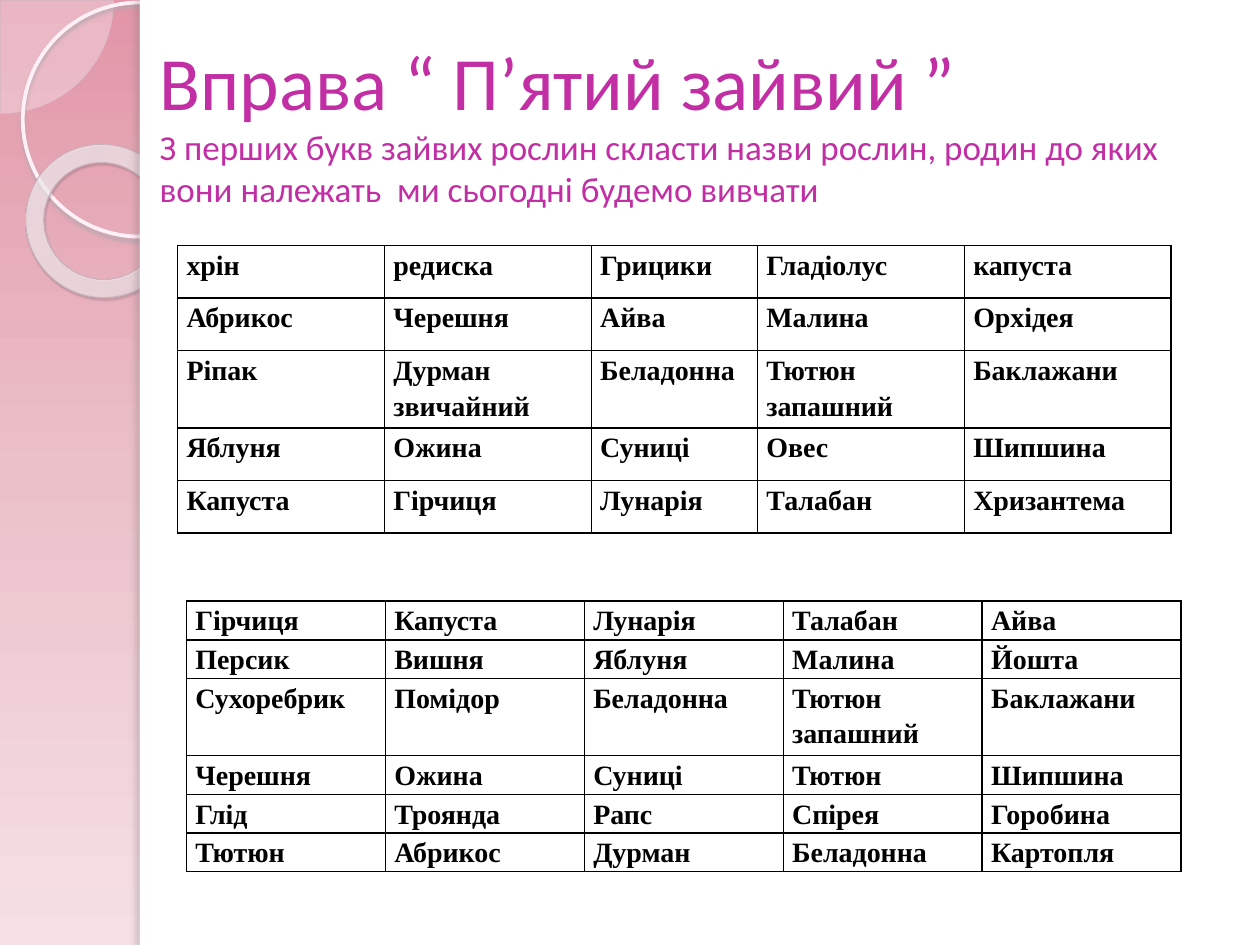
"""Build the plant-puzzle slide with a pink decorated margin and two word tables."""
from dataclasses import dataclass
from typing import Optional

from lxml.etree import SubElement
from pptx import Presentation
from pptx.dml.color import RGBColor
from pptx.enum.shapes import MSO_SHAPE as Preset
from pptx.enum.text import MSO_ANCHOR as Anchor
from pptx.oxml.ns import qn
from pptx.util import Cm, Pt


@dataclass(frozen=True)
class Stop:
    position: int
    color: str
    alpha: int = 100


@dataclass(frozen=True)
class Shadow:
    color: str
    alpha: int
    blur: float
    distance: float
    angle: int


@dataclass(frozen=True)
class Ornament:
    preset: Preset
    box: tuple[float, float, float, float]
    fill: Optional[str] = None
    alpha: int = 100
    glow: tuple[Stop, ...] = ()
    line: Optional[str] = None
    line_width: float = 0
    shadow: Optional[Shadow] = None
    rotation: float = 0
    adjustments: tuple[float, ...] = ()


@dataclass(frozen=True)
class WordTable:
    left: float
    top: float
    columns: tuple[float, ...]
    heights: tuple[float, ...]
    words: tuple[str, ...]


BACKDROP = (Stop(0, "E296A8"), Stop(50, "EBC0C9"), Stop(100, "F5E0E5"))
RING_GLOW = (Stop(0, "FEFAFC", 70), Stop(70, "FFFDFE", 55), Stop(100, "E7BCD0", 60))
GLOW_CENTER = {"l": -408, "t": -50, "r": 508, "b": 150}

ORNAMENTS = (
    Ornament(Preset.PIE, (-2.26, -2.26, 4.55, 4.55), "FEFAFC", 33,
             line="D7C0CB", line_width=0.25, adjustments=(0, 54)),
    Ornament(Preset.OVAL, (0.46, 0.05, 4.72, 4.72), line="FFF0F7", line_width=2.15,
             shadow=Shadow("B7A8AF", 85, 2, 2, 90)),
    Ornament(Preset.DONUT, (0.51, 2.92, 3.12, 3.07), glow=RING_GLOW, line="CAB3BD",
             line_width=0.58, shadow=Shadow("5C5257", 35, 1, 1.2, 75),
             rotation=38.6, adjustments=(0.12,)),
    Ornament(Preset.RECTANGLE, (2.82, 0, 22.58, 19.05), "FFFFFF"),
    Ornament(Preset.RECTANGLE, (2.82, 0, 0.2, 19.05), "FFFFFF",
             shadow=Shadow("7A7276", 25, 3, 3, 180)),
)

TABLES = (
    WordTable(3.58, 4.95, (4.17, 4.17, 3.35, 4.17, 4.17), (1.06,) * 5, (
        "хрін|редиска|Грицики|Гладіолус|капуста",
        "Абрикос|Черешня|Айва|Малина|Орхідея",
        "Ріпак|Дурман звичайний|Беладонна|Тютюн запашний|Баклажани",
        "Яблуня|Ожина|Суниці|Овес|Шипшина",
        "Капуста|Гірчиця|Лунарія|Талабан|Хризантема",
    )),
    WordTable(3.76, 12.12, (4.01,) * 5, (0.64, 0.64, 1.24, 0.64, 0.64, 0.64), (
        "Гірчиця|Капуста|Лунарія|Талабан|Айва",
        "Персик|Вишня|Яблуня|Малина|Йошта",
        "Сухоребрик|Помідор|Беладонна|Тютюн запашний|Баклажани",
        "Черешня|Ожина|Суниці|Тютюн|Шипшина",
        "Глід|Троянда|Рапс|Спірея|Горобина",
        "Тютюн|Абрикос|Дурман|Беладонна|Картопля",
    )),
)


def rgb(color: str) -> RGBColor:
    return RGBColor.from_string(color)


def add_color(parent, color: str, alpha: int = 100) -> None:
    swatch = SubElement(parent, qn("a:srgbClr"), val=color)
    if alpha < 100:
        SubElement(swatch, qn("a:alpha"), val=str(alpha * 1000))


def set_gradient(fill, owner, stops: tuple[Stop, ...], radial: bool = False) -> None:
    fill.gradient()
    gradient = owner.find(".//" + qn("a:gradFill"))
    for child in list(gradient):
        gradient.remove(child)
    stop_list = SubElement(gradient, qn("a:gsLst"))
    for stop in stops:
        mark = SubElement(stop_list, qn("a:gs"), pos=str(stop.position * 1000))
        add_color(mark, stop.color, stop.alpha)
    if radial:
        circle = SubElement(gradient, qn("a:path"), {"path": "circle"})
        SubElement(circle, qn("a:fillToRect"),
                   {side: str(share * 1000) for side, share in GLOW_CENTER.items()})
    else:
        SubElement(gradient, qn("a:lin"), ang=str(90 * 60000), scaled="0")


def set_shadow(shape, shadow: Shadow) -> None:
    effects = shape.element.spPr.find(qn("a:effectLst"))
    outer = SubElement(effects, qn("a:outerShdw"), blurRad=str(Pt(shadow.blur)),
                       dist=str(Pt(shadow.distance)), dir=str(shadow.angle * 60000),
                       algn="ctr", rotWithShape="0")
    add_color(outer, shadow.color, shadow.alpha)


def draw_ornament(slide, ornament: Ornament) -> None:
    shape = slide.shapes.add_shape(ornament.preset, *map(Cm, ornament.box))
    shape.shadow.inherit = False
    shape.rotation = ornament.rotation
    for index, value in enumerate(ornament.adjustments):
        shape.adjustments[index] = value
    if ornament.glow:
        set_gradient(shape.fill, shape.element.spPr, ornament.glow, radial=True)
    elif ornament.fill:
        shape.fill.solid()
        shape.fill.fore_color.rgb = rgb(ornament.fill)
        if ornament.alpha < 100:
            swatch = shape.element.spPr.find(qn("a:solidFill")).find(qn("a:srgbClr"))
            SubElement(swatch, qn("a:alpha"), val=str(ornament.alpha * 1000))
    else:
        shape.fill.background()
    if ornament.line:
        shape.line.color.rgb = rgb(ornament.line)
        shape.line.width = Pt(ornament.line_width)
    else:
        shape.line.fill.background()
    if ornament.shadow:
        set_shadow(shape, ornament.shadow)


def write(paragraph, text: str, *, size: float, font: str, color: str,
          bold: bool = False, spacing: float = 1.0) -> None:
    run = paragraph.add_run()
    run.text = text
    run.font.size = Pt(size)
    run.font.name = font
    run.font.bold = bold
    run.font.color.rgb = rgb(color)
    paragraph.line_spacing = spacing


def draw_heading(slide) -> None:
    heading = slide.shapes.add_textbox(Cm(2.97), Cm(0), Cm(20.83), Cm(4.95)).text_frame
    heading.word_wrap = True
    heading.vertical_anchor = Anchor.MIDDLE
    paragraph = heading.paragraphs[0]
    write(paragraph, "Вправа “ П’ятий зайвий ”", size=43, font="Calibri", color="C22EA4")
    paragraph.add_line_break()
    write(paragraph, "З перших букв зайвих рослин скласти назви рослин, родин до яких "
          "вони належать  ми сьогодні будемо вивчати",
          size=20, font="Calibri", color="C22EA4")


def format_cell(cell) -> None:
    cell.margin_left = cell.margin_right = Cm(0.18)
    cell.margin_top = cell.margin_bottom = 0
    properties = cell._tc.get_or_add_tcPr()
    for side in ("a:lnL", "a:lnR", "a:lnT", "a:lnB"):
        border = SubElement(properties, qn(side), w=str(Pt(1)))
        add_color(SubElement(border, qn("a:solidFill")), "000000")
    cell.fill.background()


def draw_table(slide, plan: WordTable) -> None:
    table = slide.shapes.add_table(
        len(plan.words), len(plan.columns), Cm(plan.left), Cm(plan.top),
        Cm(sum(plan.columns)), Cm(sum(plan.heights))).table
    table.first_row = table.horz_banding = False
    for column, width in zip(table.columns, plan.columns):
        column.width = Cm(width)
    for row, height, words in zip(table.rows, plan.heights, plan.words):
        row.height = Cm(height)
        for cell, word in zip(row.cells, words.split("|")):
            format_cell(cell)
            write(cell.text_frame.paragraphs[0], word, size=16, font="Times New Roman",
                  color="000000", bold=True, spacing=1.15)


def main() -> None:
    deck = Presentation()
    deck.slide_width, deck.slide_height = Cm(25.4), Cm(19.05)
    slide = deck.slides.add_slide(deck.slide_layouts[6])
    set_gradient(slide.background.fill, slide.element, BACKDROP)
    for ornament in ORNAMENTS:
        draw_ornament(slide, ornament)
    draw_heading(slide)
    for plan in TABLES:
        draw_table(slide, plan)
    deck.save("out.pptx")


if __name__ == "__main__":
    main()
